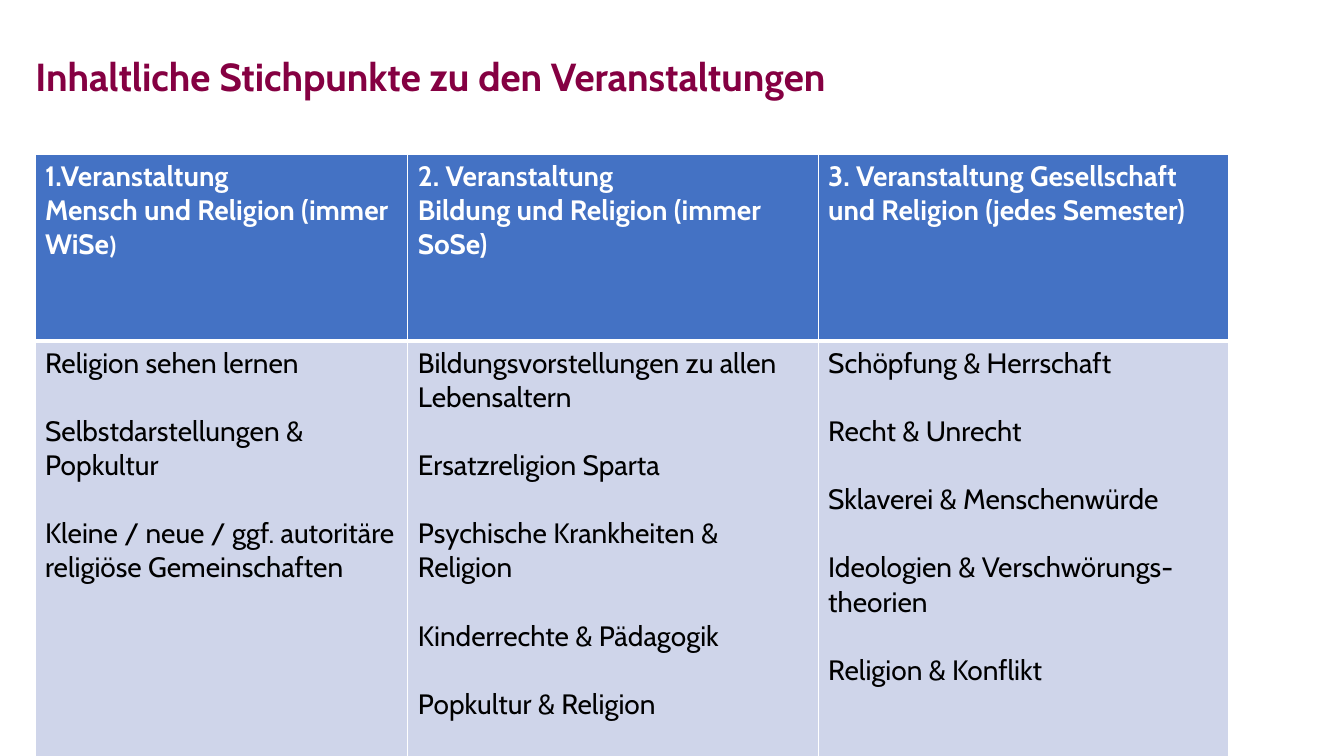
import pptx
import pptx.dml.color
import pptx.enum.text
import pptx.oxml
import pptx.oxml.ns
import pptx.util

WIDTH = pptx.util.Inches(13.333)
HEIGHT = pptx.util.Inches(7.5)
FONT = "Cabin"
TEXT_SIZE = 20
TOPIC_GAP = 24.4
WINE, BLUE, PALE, WHITE, BLACK = "850042", "4472C4", "CFD5EA", "FFFFFF", "000000"
COLUMN_PARTS = [10, 11, 11]
ROW_SHARES = [0.247, 0.553]

HEADINGS = [
    ["1.Veranstaltung", "Mensch und Religion (immer WiSe"],
    ["2. Veranstaltung", "Bildung und Religion (immer SoSe)"],
    ["3. Veranstaltung Gesellschaft und Religion (jedes Semester)"],
]
TOPICS = [
    [
        "Religion sehen lernen",
        "Selbstdarstellungen & Popkultur",
        "Kleine / neue / ggf. autoritäre religiöse Gemeinschaften",
    ],
    [
        "Bildungsvorstellungen zu allen Lebensaltern",
        "Ersatzreligion Sparta",
        "Psychische Krankheiten & Religion",
        "Kinderrechte & Pädagogik",
        "Popkultur & Religion",
    ],
    [
        "Schöpfung & Herrschaft",
        "Recht & Unrecht",
        "Sklaverei & Menschenwürde",
        "Ideologien & Verschwörungs-theorien",
        "Religion & Konflikt",
    ],
]


def across(share):
    return round(WIDTH * share)


def down(share):
    return round(HEIGHT * share)


def color(value):
    return pptx.dml.color.RGBColor.from_string(value)


def style(font, size, value, bold, name=FONT):
    font.name = name
    font.size = pptx.util.Pt(size)
    font.bold = bold
    font.color.rgb = color(value)


def write(frame, lines, size, value, bold, gap=0):
    for index, line in enumerate(lines):
        paragraph = frame.paragraphs[0] if index == 0 else frame.add_paragraph()
        paragraph.text = line
        style(paragraph.font, size, value, bold)
        if index and gap:
            paragraph.space_before = pptx.util.Pt(gap)


def add_title(slide, text):
    box = slide.shapes.add_textbox(across(0.019), down(0.053), across(0.616), down(0.184))
    frame = box.text_frame
    frame.word_wrap = True
    frame.vertical_anchor = pptx.enum.text.MSO_ANCHOR.TOP
    frame.margin_top = down(0.023)
    write(frame, [text], 27.9, WINE, True)
    frame.paragraphs[0].line_spacing = 0.9


def set_borders(cell, top, bottom):
    properties = cell._tc.get_or_add_tcPr()
    for side, points in (("L", 1), ("R", 1), ("T", top), ("B", bottom)):
        properties.append(pptx.oxml.parse_xml(
            f'<a:ln{side} {pptx.oxml.ns.nsdecls("a")} w="{pptx.util.Pt(points)}">'
            f'<a:solidFill><a:srgbClr val="{WHITE}"/></a:solidFill></a:ln{side}>'
        ))


def fill_row(table, row, contents, fill, value, bold, borders, gap=0):
    for column, lines in enumerate(contents):
        cell = table.cell(row, column)
        set_borders(cell, *borders)
        cell.fill.solid()
        cell.fill.fore_color.rgb = color(fill)
        write(cell.text_frame, lines, TEXT_SIZE, value, bold, gap)


def add_course_table(slide):
    width = across(0.888)
    frame = slide.shapes.add_table(
        len(ROW_SHARES), len(COLUMN_PARTS),
        across(0.026), down(0.204), width, down(sum(ROW_SHARES)),
    )
    table = frame.table
    for column, part in zip(table.columns, COLUMN_PARTS):
        column.width = round(width * part / sum(COLUMN_PARTS))
    for row, share in zip(table.rows, ROW_SHARES):
        row.height = down(share)
    fill_row(table, 0, HEADINGS, BLUE, WHITE, True, (1, 3))
    fill_row(table, 1, TOPICS, PALE, BLACK, False, (3, 1), TOPIC_GAP)
    closing = table.cell(0, 0).text_frame.paragraphs[-1].add_run()
    closing.text = ")"
    style(closing.font, 18, WHITE, True, "Calibri")


def main():
    presentation = pptx.Presentation()
    presentation.slide_width = WIDTH
    presentation.slide_height = HEIGHT
    slide = presentation.slides.add_slide(presentation.slide_layouts[6])
    add_title(slide, "Inhaltliche Stichpunkte zu den Veranstaltungen")
    add_course_table(slide)
    presentation.save("out.pptx")


if __name__ == "__main__":
    main()
